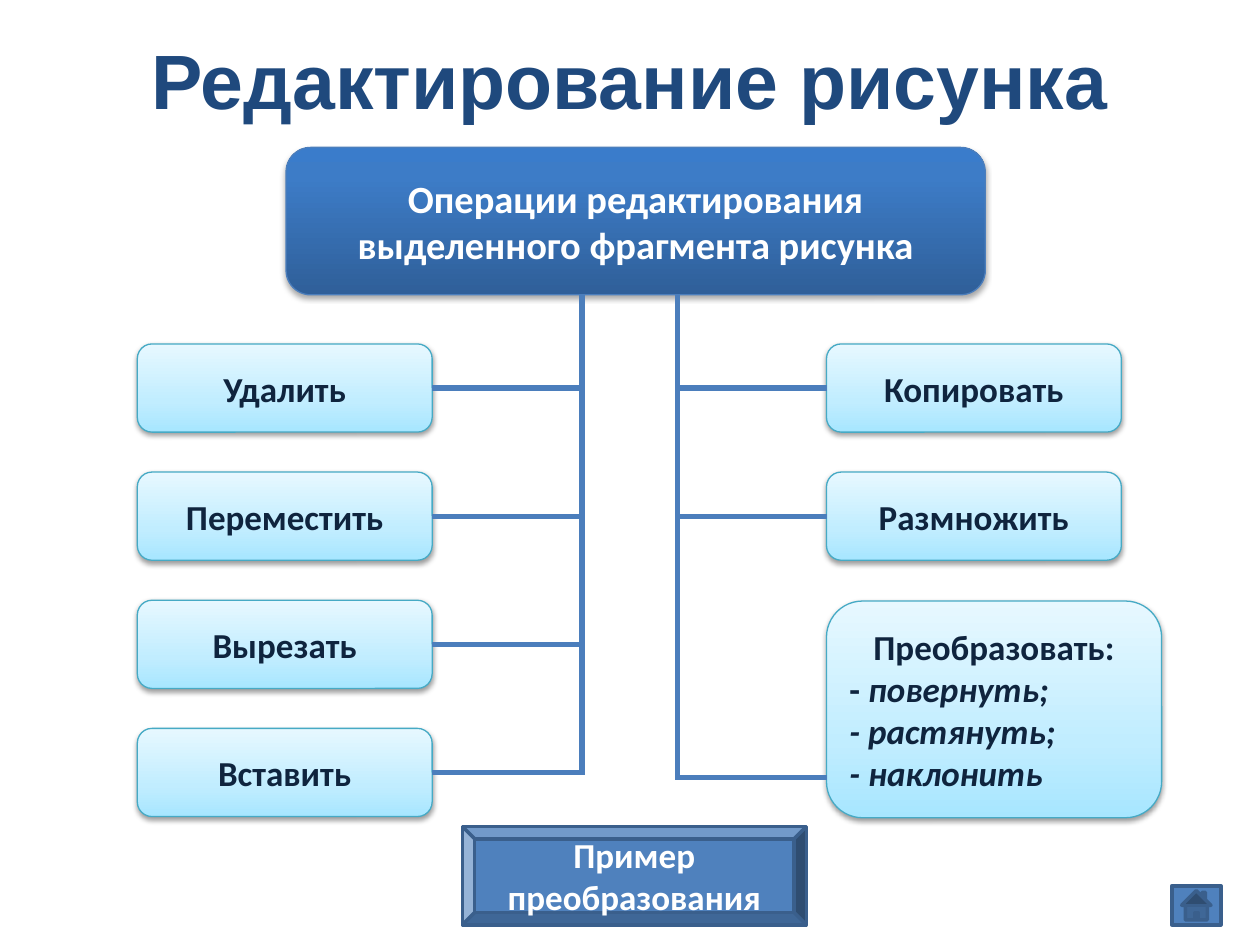
import dataclasses

import lxml.etree
import pptx
import pptx.dml.color
import pptx.enum.shapes
import pptx.enum.text
import pptx.oxml
import pptx.oxml.ns
import pptx.util

Inches = pptx.util.Inches
Pt = pptx.util.Pt
SHAPES = pptx.enum.shapes.MSO_SHAPE
ALIGN = pptx.enum.text.PP_ALIGN
TOP, LEFT, BOTTOM, RIGHT = range(4)


@dataclasses.dataclass(frozen=True)
class Theme:
    title_font: str = "Arial"
    body_font: str = "Calibri"
    title_color: str = "1F497D"
    dark_text: str = "0F243E"
    light_text: str = "FFFFFF"
    connector: str = "4B7EBC"
    operation_line: str = "46AAC5"
    button_fill: str = "4F81BD"
    button_line: str = "3A5F8C"
    header_stops: tuple = ((0, "2F5F99"), (80, "3D7CC7"), (100, "3A7CCB"))
    operation_stops: tuple = ((0, "A7E6FF"), (35, "C1EDFF"), (100, "E7F8FF"))
    title_size: int = 44
    header_size: int = 22
    label_size: int = 20


THEME = Theme()


def rgb(value):
    return pptx.dml.color.RGBColor.from_string(value)


def write_text(frame, *paragraphs, size, color, font=THEME.body_font, aligns=(ALIGN.CENTER,)):
    frame.word_wrap = True
    frame.vertical_anchor = pptx.enum.text.MSO_ANCHOR.MIDDLE
    for index, runs in enumerate(paragraphs):
        paragraph = frame.paragraphs[0] if index == 0 else frame.add_paragraph()
        paragraph.alignment = aligns[min(index, len(aligns) - 1)]
        for text, italic in runs:
            run = paragraph.add_run()
            run.text = text
            run.font.name = font
            run.font.size = Pt(size)
            run.font.bold = True
            run.font.italic = italic
            run.font.color.rgb = rgb(color)


def add_panel(slide, kind, box, line, line_width):
    panel = slide.shapes.add_shape(kind, *map(Inches, box))
    panel.shadow.inherit = False
    panel.line.color.rgb = rgb(line)
    panel.line.width = Pt(line_width)
    return panel


def add_glossy_panel(slide, box, stops, line, shadow):
    panel = add_panel(slide, SHAPES.ROUNDED_RECTANGLE, box, line, 0.75)
    namespace = pptx.oxml.ns.nsdecls("a")
    stop_xml = "".join(
        f'<a:gs pos="{position * 1000}"><a:srgbClr val="{color}"/></a:gs>'
        for position, color in stops
    )
    gradient = pptx.oxml.parse_xml(
        f'<a:gradFill {namespace} rotWithShape="1"><a:gsLst>{stop_xml}</a:gsLst>'
        '<a:lin ang="16200000" scaled="0"/></a:gradFill>'
    )
    properties = panel._element.spPr
    properties.find(pptx.oxml.ns.qn("a:prstGeom")).addnext(gradient)
    opacity, distance = shadow
    properties.find(pptx.oxml.ns.qn("a:effectLst")).append(pptx.oxml.parse_xml(
        f'<a:outerShdw {namespace} blurRad="{Pt(3.1)}" dist="{Pt(distance)}" '
        'dir="5400000" rotWithShape="0"><a:srgbClr val="000000">'
        f'<a:alpha val="{opacity * 1000}"/></a:srgbClr></a:outerShdw>'
    ))
    return panel


def add_line(slide, start, end):
    line = slide.shapes.add_connector(
        pptx.enum.shapes.MSO_CONNECTOR.STRAIGHT, *map(Inches, (*start, *end))
    )
    line.line.color.rgb = rgb(THEME.connector)
    line.line.width = Pt(3)
    lxml.etree.SubElement(line._element.spPr, pptx.oxml.ns.qn("a:effectLst"))
    return line


def add_title(slide, box, text):
    title = slide.shapes.title
    title.left, title.top, title.width, title.height = map(Inches, box)
    write_text(title.text_frame, [(text, False)], size=THEME.title_size,
               color=THEME.title_color, font=THEME.title_font)


def add_header(slide, box, text):
    header = add_glossy_panel(slide, box, THEME.header_stops, THEME.connector, (35, 1.8))
    write_text(header.text_frame, [(text, False)], size=THEME.header_size,
               color=THEME.light_text)


def add_operation(slide, box, *paragraphs, aligns=(ALIGN.CENTER,)):
    operation = add_glossy_panel(slide, box, THEME.operation_stops,
                                 THEME.operation_line, (38, 1.6))
    write_text(operation.text_frame, *paragraphs, size=THEME.label_size,
               color=THEME.dark_text, aligns=aligns)
    return operation


def add_branch(slide, box, labels, trunk_x, side):
    left, top, width, height = box
    pitch = 1.017
    edge = left + width if side == RIGHT else left
    for row, label in enumerate(labels):
        row_top = top + row * pitch
        middle = row_top + height / 2
        operation = add_operation(slide, (left, row_top, width, height), [(label, False)])
        twig = add_line(slide, (trunk_x, middle), (edge, middle))
        twig.end_connect(operation, side)


def add_transform(slide, box, trunk_x, twig_y):
    add_operation(
        slide, box,
        [("Преобразовать:", False)],
        [("- ", False), ("повернуть;", True)],
        [("- растянуть;", True)],
        [("- наклонить", True)],
        aligns=(ALIGN.CENTER, ALIGN.LEFT),
    )
    add_line(slide, (trunk_x, twig_y), (box[0], twig_y))


def add_button(slide, kind, box, text=None):
    button = add_panel(slide, kind, box, THEME.button_line, 2)
    button.fill.solid()
    button.fill.fore_color.rgb = rgb(THEME.button_fill)
    if text:
        write_text(button.text_frame, [(text, False)], size=THEME.label_size,
                   color=THEME.light_text)


def main():
    presentation = pptx.Presentation()
    presentation.slide_width = Inches(10)
    presentation.slide_height = Inches(7.5)
    slide = presentation.slides.add_slide(presentation.slide_layouts[5])

    left_trunk, right_trunk = 4.62, 5.38
    header_bottom = 2.34
    add_title(slide, (0.5, 0, 9, 1.25), "Редактирование рисунка")
    add_header(slide, (2.27, 1.17, 5.55, 1.17),
               "Операции редактирования выделенного фрагмента рисунка")
    add_branch(slide, (1.09, 2.73, 2.34, 0.7),
               ("Удалить", "Переместить", "Вырезать", "Вставить"), left_trunk, RIGHT)
    add_branch(slide, (6.56, 2.73, 2.34, 0.7),
               ("Копировать", "Размножить"), right_trunk, LEFT)
    add_transform(slide, (6.56, 4.77, 2.66, 1.72), right_trunk, 6.17)
    add_line(slide, (left_trunk, header_bottom), (left_trunk, 6.15))
    add_line(slide, (right_trunk, header_bottom), (right_trunk, 6.19))
    add_button(slide, SHAPES.BEVEL, (3.67, 6.56, 2.73, 0.78), "Пример преобразования")
    add_button(slide, SHAPES.ACTION_BUTTON_HOME, (9.3, 7.03, 0.39, 0.31))
    presentation.save("out.pptx")


if __name__ == "__main__":
    main()
